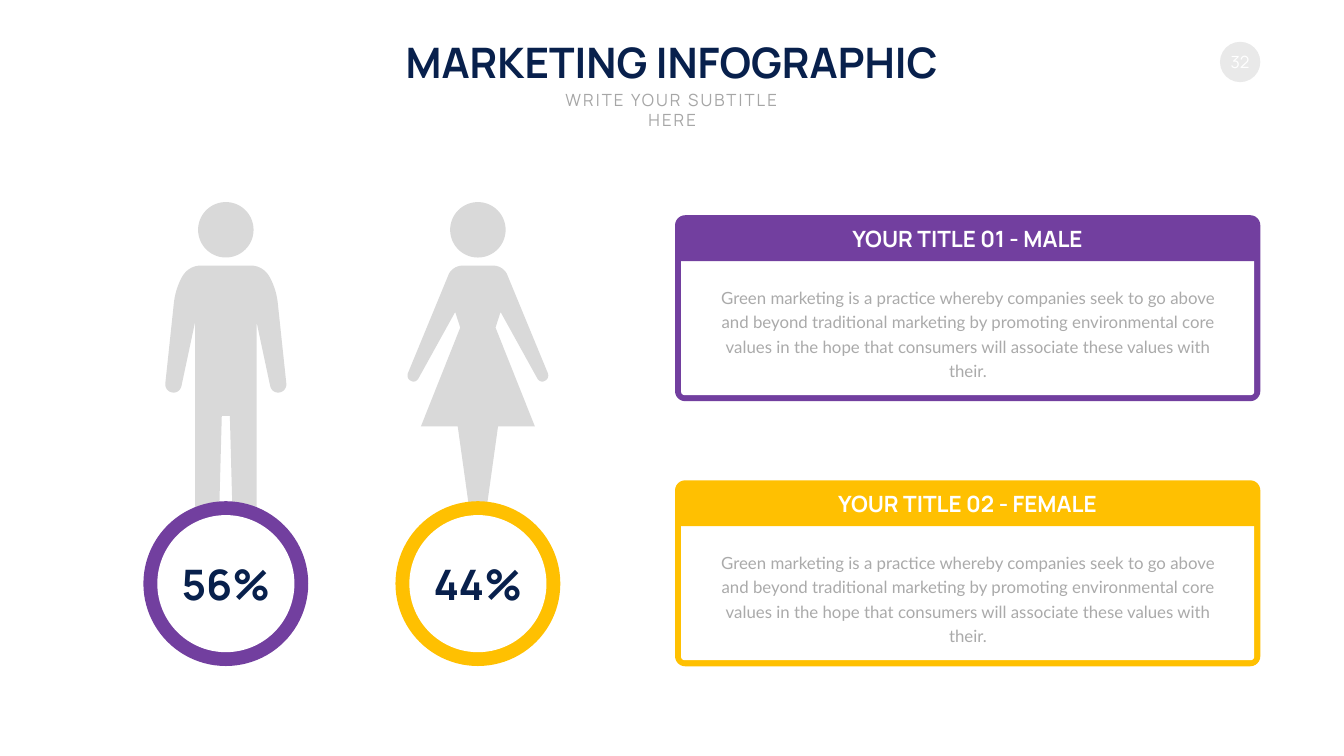
from dataclasses import dataclass
from math import cos, pi, sin

from pptx import Presentation
from pptx.dml.color import RGBColor
from pptx.enum.shapes import MSO_SHAPE
from pptx.enum.text import MSO_ANCHOR, MSO_AUTO_SIZE, PP_ALIGN
from pptx.util import Inches, Pt

Point = tuple[float, float]
Segment = tuple[Point, ...]


@dataclass(frozen=True)
class Theme:
    navy: str = "08204C"
    purple: str = "723F9F"
    yellow: str = "FFC001"
    white: str = "FFFFFF"
    figure: str = "D9D9D9"
    badge: str = "E9E9E9"
    subtitle: str = "A6A6A6"
    body: str = "AAAAAA"
    heading_font: str = "Manrope"
    body_font: str = "Lato"
    title_size: int = 60
    header_size: int = 32
    text_size: int = 24


@dataclass(frozen=True)
class Group:
    centre: float
    half_outline: tuple[Segment, ...]
    percent: str
    colour: str
    panel_top: float
    header: str
    header_width: float


THEME = Theme()
HEAD_Y, HEAD_RADIUS = 4.56, 0.55
RING_Y, RING_OUTER, RING_INNER = 11.58, 3.27, 2.72
PANEL_LEFT, PANEL_WIDTH, PANEL_HEIGHT, BORDER = 13.39, 11.61, 3.69, 0.12
DESCRIPTION = (
    "Green marketing is a practice whereby companies seek to go above and beyond "
    "traditional marketing by promoting environmental core values in the hope that "
    "consumers will associate these values with their."
)
MALE = (
    ((0, 5.27),),
    ((0.5, 5.27),),
    ((0.65, 5.27), (0.78, 5.35), (0.86, 5.48)),
    ((0.95, 5.64), (1.01, 5.82), (1.03, 6.01)),
    ((1.2, 7.61),),
    ((1.21, 7.71), (1.13, 7.79), (1.04, 7.79)),
    ((0.96, 7.79), (0.9, 7.74), (0.88, 7.66)),
    ((0.61, 6.39),),
    ((0.61, 10.47),),
    ((0.14, 10.47),),
    ((0.08, 8.25),),
)
FEMALE = (
    ((0, 5.27),),
    ((0.3, 5.27),),
    ((0.43, 5.27), (0.55, 5.35), (0.59, 5.47)),
    ((1.39, 7.41),),
    ((1.41, 7.47), (1.38, 7.54), (1.32, 7.56)),
    ((1.27, 7.59), (1.21, 7.56), (1.18, 7.51)),
    ((0.45, 6.19),),
    ((0.35, 6.5),),
    ((1.13, 8.46),),
    ((0.4, 8.46),),
    ((0.13, 10.39),),
)
GROUPS = (
    Group(4.48, MALE, "56%", THEME.purple, 4.27, "YOUR TITLE 01 - MALE", 4.88),
    Group(9.48, FEMALE, "44%", THEME.yellow, 9.53, "YOUR TITLE 02 - FEMALE", 5.46),
)


def paint(sp, colour: str) -> None:
    sp.fill.solid()
    sp.fill.fore_color.rgb = RGBColor.from_string(colour)
    sp.line.fill.background()
    sp.shadow.inherit = False


def add_block(s, kind: MSO_SHAPE, x: float, y: float, w: float, h: float, colour: str):
    sp = s.shapes.add_shape(kind, Inches(x), Inches(y), Inches(w), Inches(h))
    paint(sp, colour)
    return sp


def add_rounded(s, x: float, y: float, w: float, h: float, radius: float, colour: str) -> None:
    sp = add_block(s, MSO_SHAPE.ROUNDED_RECTANGLE, x, y, w, h, colour)
    sp.adjustments[0] = radius / h


def add_disc(s, x: float, y: float, size: float, colour: str):
    return add_block(s, MSO_SHAPE.OVAL, x - size / 2, y - size / 2, size, size, colour)


def write(sp, text: str, size: int, colour: str, font: str = THEME.heading_font,
          bold: bool = False, wrap: bool = False, anchor: MSO_ANCHOR = MSO_ANCHOR.MIDDLE):
    tf = sp.text_frame
    tf.auto_size = MSO_AUTO_SIZE.NONE
    tf.word_wrap = wrap
    tf.vertical_anchor = anchor
    p = tf.paragraphs[0]
    p.alignment = PP_ALIGN.CENTER
    p.space_before = Pt(0)
    p.font.name = font
    p.font.size = Pt(size)
    p.font.bold = bold
    p.font.color.rgb = RGBColor.from_string(colour)
    p.add_run().text = text
    return p


def add_text_box(s, x: float, y: float, w: float, h: float):
    return s.shapes.add_textbox(Inches(x), Inches(y), Inches(w), Inches(h))


def place(sp, x: float, y: float, w: float, h: float) -> None:
    sp.left, sp.top, sp.width, sp.height = Inches(x), Inches(y), Inches(w), Inches(h)


def flatten(segments: tuple[Segment, ...], steps: int = 10) -> list[Point]:
    points: list[Point] = []
    for segment in segments:
        if len(segment) == 1:
            points.append(segment[0])
            continue
        a, (b, c, d) = points[-1], segment
        for t in (i / steps for i in range(1, steps + 1)):
            u = 1 - t
            weights = (u**3, 3 * u * u * t, 3 * u * t * t, t**3)
            points.append(tuple(
                sum(k * q[axis] for k, q in zip(weights, (a, b, c, d))) for axis in (0, 1)
            ))
    return points


def add_figure(s, centre: float, half_outline: tuple[Segment, ...]) -> None:
    right = flatten(half_outline)
    body = right + [(-x, y) for x, y in reversed(right)]
    angles = [2 * pi * i / 72 for i in range(72)]
    head = [(HEAD_RADIUS * cos(a), HEAD_Y + HEAD_RADIUS * sin(a)) for a in angles]
    body, head = (
        [(Inches(centre + x), Inches(y)) for x, y in contour] for contour in (body, head)
    )
    builder = s.shapes.build_freeform(*body[0])
    builder.add_line_segments(body[1:])
    builder.move_to(*head[0])
    builder.add_line_segments(head[1:])
    paint(builder.convert_to_shape(), THEME.figure)


def add_ring(s, group: Group) -> None:
    add_disc(s, group.centre, RING_Y, RING_OUTER, group.colour)
    add_disc(s, group.centre, RING_Y, RING_INNER, THEME.white)
    label = add_text_box(s, group.centre - 1.02, 11.02, 2.04, 1.11)
    write(label, group.percent, THEME.title_size, THEME.navy, bold=True)


def add_panel(s, group: Group) -> None:
    top = group.panel_top
    add_rounded(s, PANEL_LEFT, top, PANEL_WIDTH, PANEL_HEIGHT, 0.2, group.colour)
    add_rounded(s, PANEL_LEFT + BORDER, top + BORDER, PANEL_WIDTH - 2 * BORDER,
                PANEL_HEIGHT - 2 * BORDER, 0.07, THEME.white)
    add_block(s, MSO_SHAPE.RECTANGLE, PANEL_LEFT + 0.11, top + 0.11, 11.41, 0.8, group.colour)
    middle = PANEL_LEFT + PANEL_WIDTH / 2
    header = add_text_box(s, middle - group.header_width / 2, top + 0.15, group.header_width, 0.64)
    write(header, group.header, THEME.header_size, THEME.white, bold=True)
    body = add_text_box(s, 13.92, top + 1.3, 10.56, 1.52)
    p = write(body, DESCRIPTION, THEME.text_size, THEME.body, THEME.body_font,
              wrap=True, anchor=MSO_ANCHOR.TOP)
    p.line_spacing = Pt(35)
    p.space_before = Pt(4.8)


def main() -> None:
    prs = Presentation()
    prs.slide_width, prs.slide_height = Inches(26.66), Inches(15)
    s = prs.slides.add_slide(prs.slide_layouts[0])

    title, subtitle = s.placeholders
    place(title, 7.71, 0.67, 11.23, 1.11)
    write(title, "MARKETING INFOGRAPHIC", THEME.title_size, THEME.navy,
          bold=True, anchor=MSO_ANCHOR.TOP)
    place(subtitle, 10.62, 1.72, 5.43, 0.5)
    p = write(subtitle, "WRITE YOUR SUBTITLE HERE", THEME.text_size, THEME.subtitle,
              wrap=True, anchor=MSO_ANCHOR.TOP)
    p.runs[0].font._element.set("spc", "300")

    badge = add_disc(s, 24.6, 1.23, 0.8, THEME.badge)
    write(badge, "32", THEME.text_size, THEME.white)

    for group in GROUPS:
        add_figure(s, group.centre, group.half_outline)
        add_ring(s, group)
        add_panel(s, group)

    prs.save("out.pptx")


if __name__ == "__main__":
    main()
